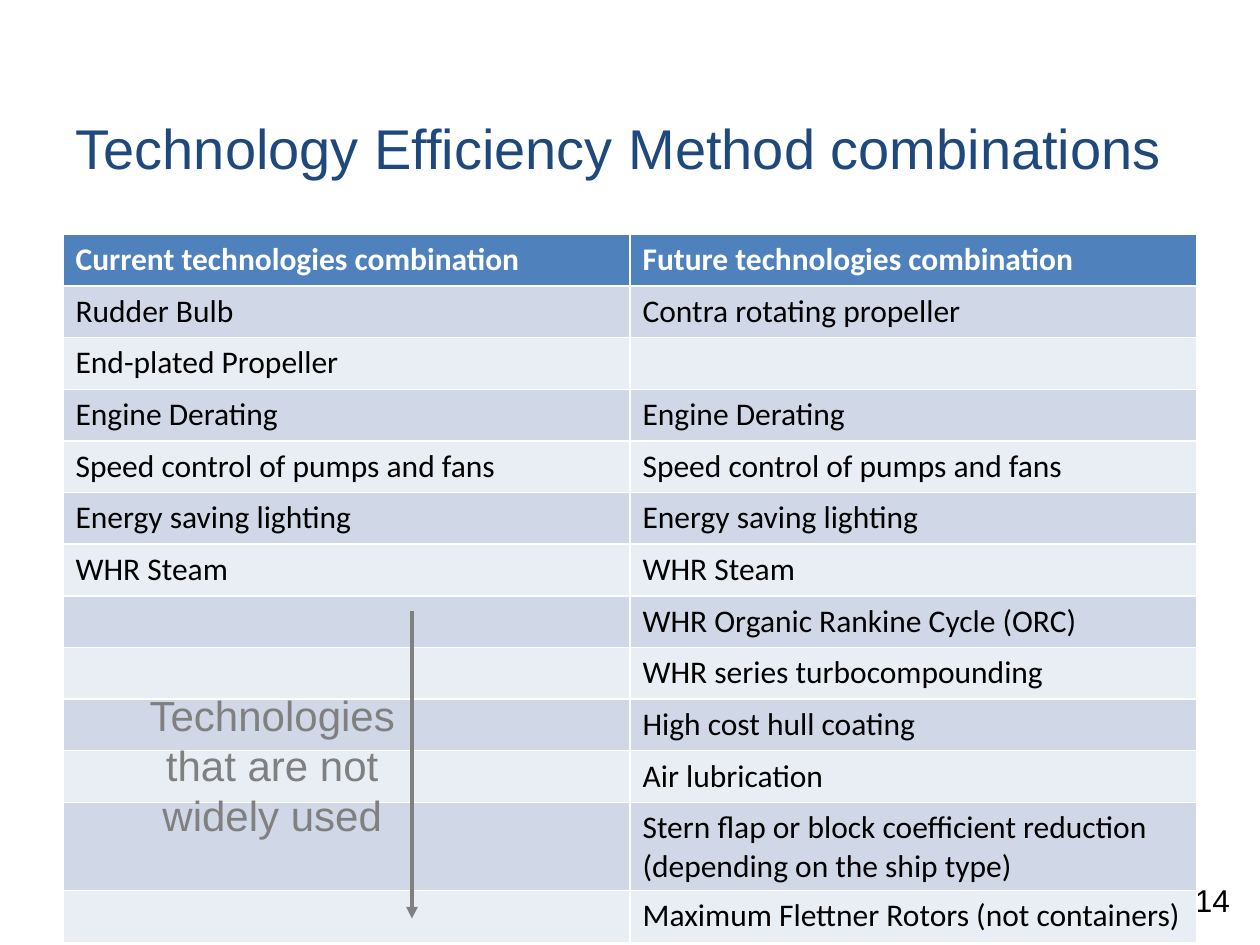
from typing import NamedTuple

from lxml import etree
from pptx import Presentation
from pptx.dml.color import RGBColor
from pptx.enum.shapes import MSO_CONNECTOR
from pptx.enum.text import MSO_ANCHOR, PP_ALIGN
from pptx.oxml.ns import qn
from pptx.util import Inches, Pt

STRAIGHT = MSO_CONNECTOR.STRAIGHT
MIDDLE = MSO_ANCHOR.MIDDLE
LEFT, CENTER, RIGHT = PP_ALIGN.LEFT, PP_ALIGN.CENTER, PP_ALIGN.RIGHT

COLORS = {
    "title": "1F497D",
    "header": "4F81BD",
    "odd_row": "D0D8E8",
    "even_row": "E9EDF4",
    "white": "FFFFFF",
    "black": "000000",
    "note": "808080",
}


class Label(NamedTuple):
    text: str
    left: float
    top: float
    width: float
    height: float
    size: int
    color: str
    alignment: PP_ALIGN


class Technology(NamedTuple):
    current: str
    future: str


PAGE_NUMBER = Label("14", 9.2, 6.94, 0.66, 0.4, 18, "black", RIGHT)
TITLE = Label("Technology Efficiency Method combinations",
              0.5, 0.62, 9, 1.09, 32, "title", LEFT)
UNUSED_NOTE = Label("Technologies that are not widely used",
                    0.97, 5.42, 2.38, 1.31, 24, "note", CENTER)

TECHNOLOGIES = [
    Technology("Current technologies combination", "Future technologies combination"),
    Technology("Rudder Bulb", "Contra rotating propeller"),
    Technology("End-plated Propeller", ""),
    Technology("Engine Derating", "Engine Derating"),
    Technology("Speed control of pumps and fans", "Speed control of pumps and fans"),
    Technology("Energy saving lighting", "Energy saving lighting"),
    Technology("WHR Steam", "WHR Steam"),
    Technology("", "WHR Organic Rankine Cycle (ORC)"),
    Technology("", "WHR series turbocompounding"),
    Technology("", "High cost hull coating"),
    Technology("", "Air lubrication"),
    Technology("", "Stern flap or block coefficient reduction (depending on the ship type)"),
    Technology("", "Maximum Flettner Rotors (not containers)"),
]
ROW_HEIGHT = 0.41


def color(name: str) -> RGBColor:
    return RGBColor.from_string(COLORS[name])


def format_font(paragraph, name: str, size: int, color_name: str, bold: bool = False) -> None:
    font = paragraph.font
    font.name = name
    font.size = Pt(size)
    font.bold = bold
    font.color.rgb = color(color_name)


def fill_label(shape, label: Label) -> None:
    shape.left, shape.top = Inches(label.left), Inches(label.top)
    shape.width, shape.height = Inches(label.width), Inches(label.height)
    shape.text_frame.word_wrap = True
    paragraph = shape.text_frame.paragraphs[0]
    paragraph.text = label.text
    paragraph.alignment = label.alignment
    format_font(paragraph, "Arial", label.size, label.color)


def add_label(slide, label: Label) -> None:
    fill_label(slide.shapes.add_textbox(0, 0, 0, 0), label)


def add_technology_table(slide, technologies: list[Technology]) -> None:
    row_count = len(technologies)
    table = slide.shapes.add_table(
        row_count, 2, Inches(0.5), Inches(1.86),
        Inches(9), Inches(ROW_HEIGHT * row_count)).table
    for row_index, technology in enumerate(technologies):
        table.rows[row_index].height = Inches(ROW_HEIGHT)
        is_header = row_index == 0
        row_fill = "header" if is_header else "odd_row" if row_index % 2 else "even_row"
        for column_index, text in enumerate(technology):
            cell = table.cell(row_index, column_index)
            cell.fill.solid()
            cell.fill.fore_color.rgb = color(row_fill)
            paragraph = cell.text_frame.paragraphs[0]
            paragraph.text = text
            format_font(paragraph, "Calibri", 18, "white" if is_header else "black", is_header)


def add_down_arrow(slide, x: float, top: float, bottom: float) -> None:
    arrow = slide.shapes.add_connector(
        STRAIGHT, Inches(x), Inches(top), Inches(x), Inches(bottom))
    arrow.line.color.rgb = color("note")
    arrow.line.width = Pt(2.25)
    etree.SubElement(arrow.line._get_or_add_ln(), qn("a:tailEnd"), type="triangle")
    etree.SubElement(arrow._element.spPr, qn("a:effectLst"))


def main() -> None:
    presentation = Presentation()
    presentation.slide_width, presentation.slide_height = Inches(10), Inches(7.5)
    slide = presentation.slides.add_slide(presentation.slide_layouts[5])

    # Page number and title
    add_label(slide, PAGE_NUMBER)
    title = slide.shapes.title
    fill_label(title, TITLE)
    title.text_frame.vertical_anchor = MIDDLE

    # Technology combinations
    add_technology_table(slide, TECHNOLOGIES)

    # Note on the technologies not widely used
    add_label(slide, UNUSED_NOTE)
    add_down_arrow(slide, 3.27, 4.85, 7.29)

    presentation.save("out.pptx")


if __name__ == "__main__":
    main()
